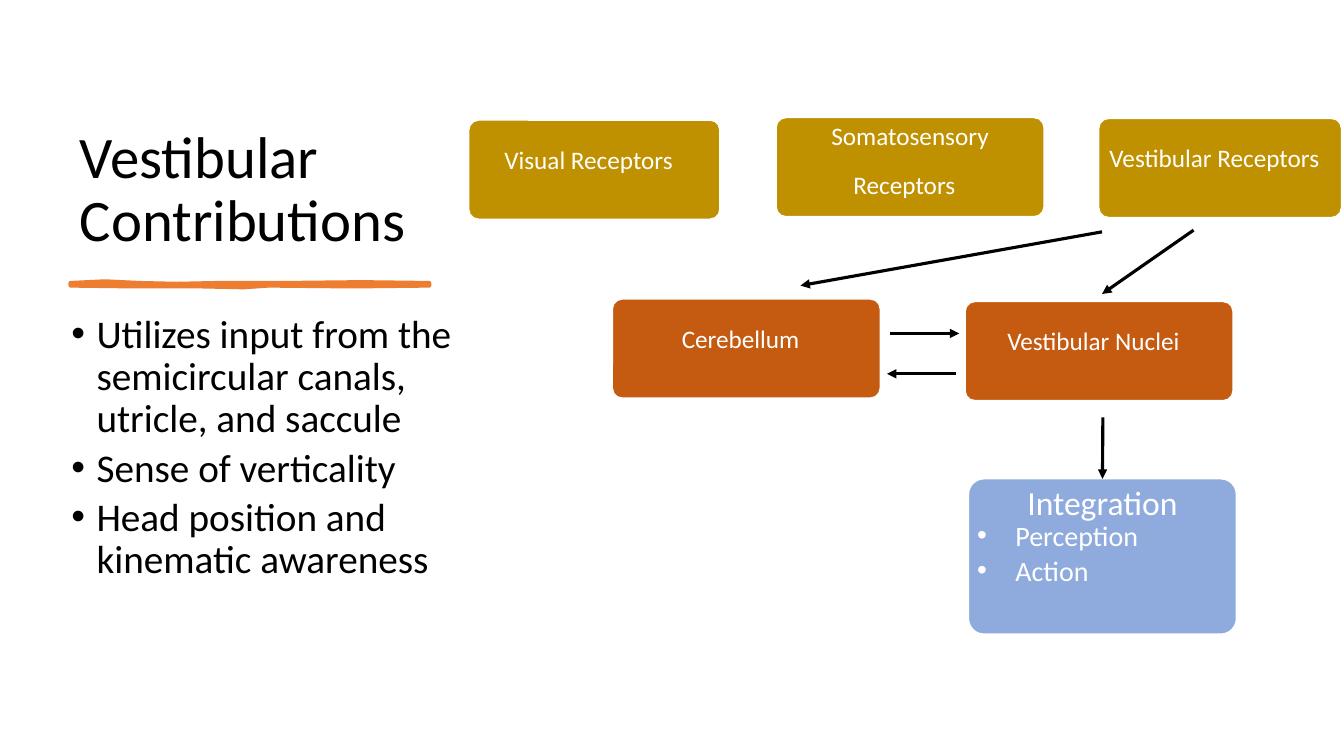
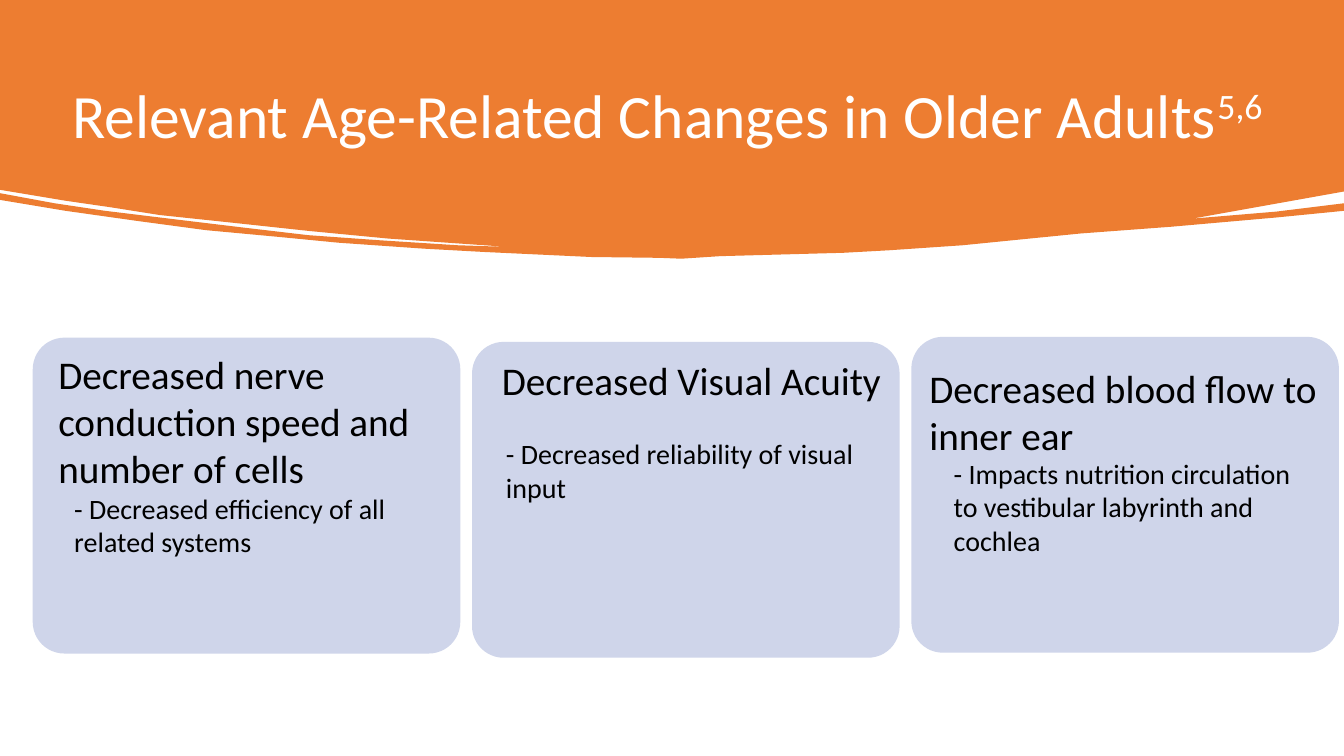
from lxml.etree import SubElement
from pptx import Presentation
from pptx.dml.color import RGBColor
from pptx.enum.shapes import MSO_CONNECTOR, MSO_SHAPE
from pptx.enum.text import MSO_ANCHOR, MSO_AUTO_SIZE, PP_ALIGN
from pptx.oxml.ns import qn
from pptx.util import Inches, Pt

FONT = "Calibri"
COLS, ROWS = 16, 9
CELL = Inches(7.5) // ROWS
HUES = {
    "ink": "000000", "white": "FFFFFF", "accent": "ED7D31", "gold": "BF9000",
    "rust": "C55A11", "blue": "8FAADC", "card": "CFD5EA",
}

# Outlines in grid units
STROKE = [
    (0.84, 3.37), (1.25, 3.35), (1.66, 3.37), (2.1, 3.38), (2.6, 3.37),
    (3.4, 3.37), (4.3, 3.36), (5.11, 3.37), (5.11, 3.4), (4.2, 3.41),
    (3.2, 3.4), (2.9, 3.42), (2.4, 3.41), (1.6, 3.41), (0.84, 3.4),
]
BANNER = [
    (0, 0), (16, 0), (16, 2.28), (14.21, 2.6), (14.1, 2.62), (14.23, 2.6),
    (15.19, 2.52), (16, 2.42), (16, 2.51), (15.19, 2.59), (13.94, 2.7),
    (12.86, 2.78), (11.46, 2.92), (10.58, 2.98), (10.04, 3.01),
    (8.57, 3.05), (8.11, 3.08), (7.85, 3.07), (7.04, 3.06), (5.76, 3),
    (5.04, 2.96), (4.03, 2.89), (3.31, 2.82), (2.45, 2.74), (1.63, 2.63),
    (0.78, 2.51), (0, 2.38), (0, 2.3), (0.65, 2.42), (1.25, 2.51),
    (1.99, 2.6), (2.9, 2.71), (3.67, 2.8), (4.51, 2.86), (5.45, 2.92),
    (6.05, 2.94), (5.48, 2.9), (4.62, 2.84), (3.68, 2.75), (2.75, 2.65),
    (1.9, 2.56), (1.33, 2.47), (0.78, 2.39), (0, 2.26),
]


def grid(*cells):
    return [round(c * CELL) for c in cells]


def hue(name):
    return RGBColor.from_string(HUES[name])


def style(run, size, color="ink"):
    font = run.font
    font.name, font.size = FONT, Pt(size)
    font.color.rgb = hue(color)


def write(para, text, size, color="ink", space=None, align=PP_ALIGN.LEFT):
    para.text = text
    para.alignment = align
    para.line_spacing = space
    for run in para.runs:
        style(run, size, color)


def bullet(para, left, hang):
    """Give a paragraph a round bullet, with its indents in inches."""
    props = para._p.get_or_add_pPr()
    props.set("marL", str(Inches(left)))
    props.set("indent", str(-Inches(hang)))
    SubElement(props, qn("a:buFont")).set("typeface", "Arial")
    SubElement(props, qn("a:buChar")).set("char", "•")


def place(shape, box):
    shape.left, shape.top, shape.width, shape.height = grid(*box)
    shape.text_frame.auto_size = MSO_AUTO_SIZE.NONE


def title(slide, text, box, size, color, anchor):
    shape = slide.shapes.title
    place(shape, box)
    shape.text_frame.vertical_anchor = anchor
    para = shape.text_frame.paragraphs[0]
    write(para, text, size, color, 0.9)
    return para


def points(slide, items, box):
    body = slide.placeholders[1]
    place(body, box)
    frame = body.text_frame
    frame.text = "\n".join(items)
    for para in frame.paragraphs:
        write(para, para.text, 28, space=0.9)
        para.space_before = Pt(5)
        bullet(para, 0.75, 0.25)


def paint(shape, fill, edge=None, width=1):
    shape.shadow.inherit = False
    shape.fill.solid()
    shape.fill.fore_color.rgb = hue(fill)
    if edge:
        shape.line.color.rgb = hue(edge)
        shape.line.width = Pt(width)
    else:
        shape.line.fill.background()


def outline(slide, dots, edge=None, width=1):
    """Draw a closed outline behind everything else on the slide."""
    first, *rest = [grid(*dot) for dot in dots]
    pen = slide.shapes.build_freeform(*first)
    pen.add_line_segments(rest, close=True)
    shape = pen.convert_to_shape()
    paint(shape, "accent", edge, width)
    slide.shapes.title._element.addprevious(shape._element)


def panel(slide, box, fill, edge=None):
    shape = slide.shapes.add_shape(MSO_SHAPE.ROUNDED_RECTANGLE, *grid(*box))
    shape.adjustments[0] = 0.1
    paint(shape, fill, edge)
    return shape


def inset(frame, side, top):
    frame.margin_left = frame.margin_right = Inches(side)
    frame.margin_top = frame.margin_bottom = Inches(top)
    frame.word_wrap = True


def node(slide, text, box, fill, size=18, tall=True):
    """Draw a labelled box; a tall label sets its last line at 36 points."""
    shape = panel(slide, box, fill, "white")
    frame = shape.text_frame
    inset(frame, 0.04, 0.03)
    frame.vertical_anchor = MSO_ANCHOR.TOP
    para = frame.paragraphs[0]
    write(para, text, size, "white", 0.9, PP_ALIGN.CENTER)
    if tall:
        run = para.add_run()
        run.text = " "
        style(run, 36, "white")
    return shape


def sublist(shape, items):
    frame = shape.text_frame
    frame.paragraphs[0].space_after = Pt(4)
    for item in items:
        para = frame.add_paragraph()
        write(para, item, 20, "white", 0.7)
        para.space_after = Pt(8)
        bullet(para, 0.38, 0.38)


def arrow(slide, start, end, goal=None):
    line = slide.shapes.add_connector(
        MSO_CONNECTOR.STRAIGHT, *grid(*start, *end))
    line.line.color.rgb = hue("ink")
    line.line.width = Pt(2.25)
    if goal is not None:
        line.end_connect(goal, 0)
    props = line._element.spPr
    SubElement(props.find(qn("a:ln")), qn("a:tailEnd")).set("type", "triangle")
    SubElement(props, qn("a:effectLst"))


def label(slide, text, box, size):
    frame = slide.shapes.add_textbox(*grid(*box)).text_frame
    inset(frame, 0.12, 0.12)
    frame.vertical_anchor = MSO_ANCHOR.MIDDLE
    write(frame.paragraphs[0], text, size)


def inputs(deck):
    slide = deck.slides.add_slide(deck.slide_layouts[1])
    title(slide, "Vestibular Contributions", (0.83, 0.83, 4.5, 2.26),
          42, "ink", MSO_ANCHOR.BOTTOM)
    outline(slide, STROKE, "accent", 3)
    points(slide, [
        "Utilizes input from the semicircular canals, utricle, and saccule",
        "Sense of verticality",
        "Head position and kinematic awareness",
    ], (0.13, 3.68, 5.57, 4.48))

    wide, high = 3.19, 1.18
    for text, x, y, w, fill in (
        ("Visual Receptors", 5.58, 1.43, 2.99, "gold"),
        ("Somatosensory Receptors", 9.24, 1.4, wide, "gold"),
        ("Vestibular Receptors", 13.08, 1.41, 2.89, "gold"),
        ("Cerebellum", 7.29, 3.56, wide, "rust"),
        ("Vestibular Nuclei", 11.49, 3.59, wide, "rust"),
    ):
        node(slide, text, (x, y, w, high), fill)
    goal = node(slide, "Integration", (11.53, 5.7, wide, 1.85), "blue",
                24, False)
    sublist(goal, ["Perception", "Action"])

    for start, end in (
        ((14.21, 2.74), (13.12, 3.5)),
        ((13.12, 2.76), (9.53, 3.4)),
        ((10.6, 3.97), (11.42, 3.97)),
        ((11.38, 4.45), (10.56, 4.45)),
    ):
        arrow(slide, start, end)
    arrow(slide, (13.13, 4.97), (13.13, 5.7), goal)


def changes(deck):
    slide = deck.slides.add_slide(deck.slide_layouts[5])
    outline(slide, BANNER)
    para = title(slide, "Relevant Age-Related Changes in Older Adults",
                 (0.74, 0.53, 14.92, 1.76), 44, "white", MSO_ANCHOR.MIDDLE)
    cite = para.add_run()
    cite.text = "5,6"
    style(cite, 44, "white")
    cite._r.get_or_add_rPr().set("baseline", "30000")

    wide, step, high = 5.09, 5.23, 1.34
    cards = (
        (4.02, "Decreased nerve conduction speed and number of cells",
         (0.55, 4.34), "- Decreased efficiency of all related systems",
         (0.74, 5.58, 4.24)),
        (4.07, "Decreased Visual Acuity",
         (5.83, 3.85), "- Decreased reliability of visual input",
         (5.88, 4.93, 4.58)),
        (4.01, "Decreased blood flow to inner ear",
         (10.92, 4.23),
         "- Impacts nutrition circulation to vestibular labyrinth and cochlea",
         (11.21, 5.36, 4.46)),
    )
    for i, (top, head, spot, note, area) in enumerate(cards):
        panel(slide, (0.39 + i * step, top, wide, 3.76), "card")
        label(slide, head, (*spot, wide, high), 28)
        label(slide, note, (*area, high), 20)


def main():
    deck = Presentation()
    deck.slide_width, deck.slide_height = grid(COLS, ROWS)
    inputs(deck)
    changes(deck)
    deck.save("out.pptx")


if __name__ == "__main__":
    main()
